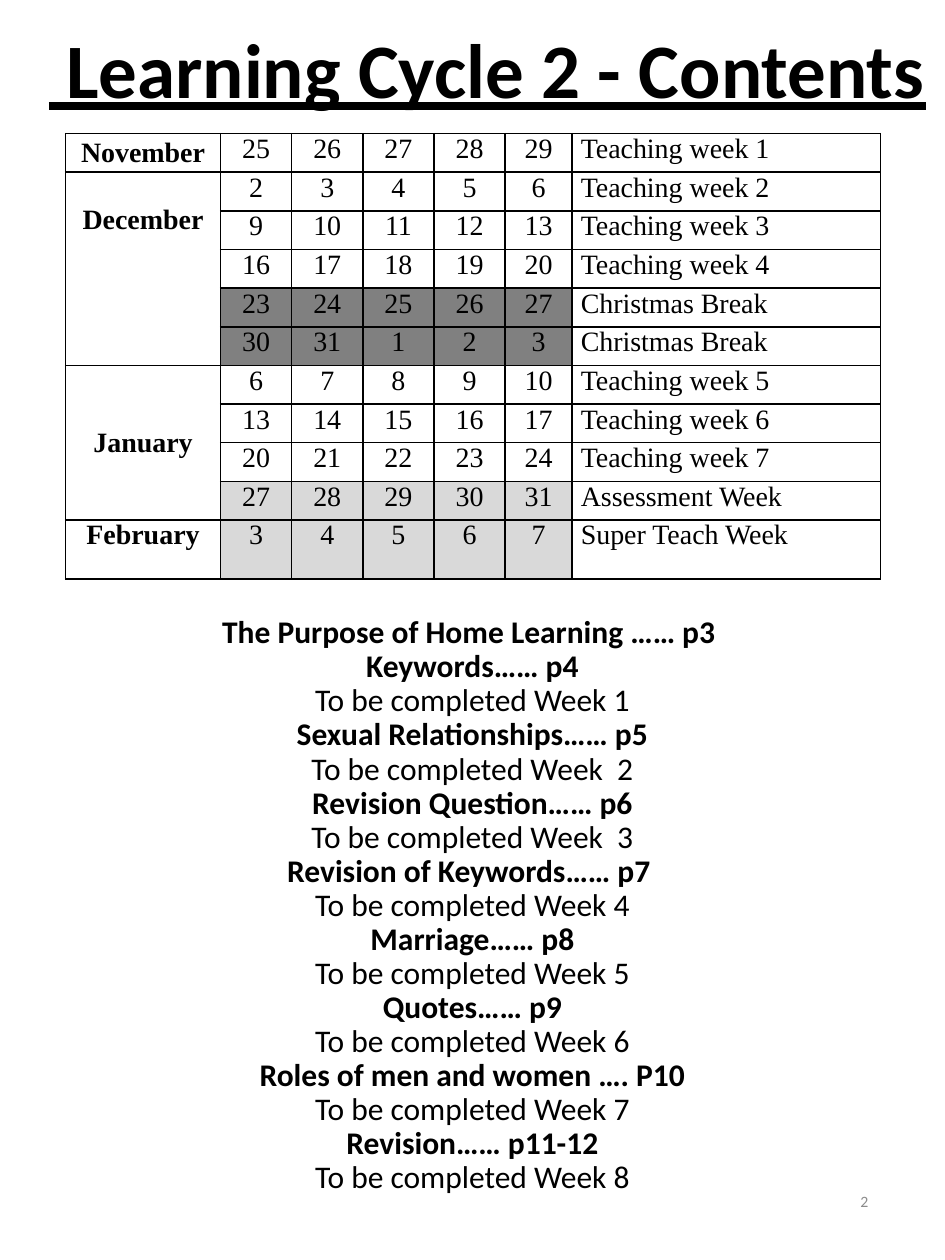
from lxml import etree
from pptx import Presentation, util as u
from pptx.dml.color import RGBColor
from pptx.enum import text
from pptx.oxml.ns import qn

WIDTH, HEIGHT = 7.5, 10
COLUMNS, ROWS = 75, 100
BLACK, WHITE, HOLIDAY, ASSESSMENT, MUTED = "000000", "FFFFFF", "808080", "D9D9D9", "8C8C8C"
CENTER, LEFT, RIGHT = text.PP_ALIGN.CENTER, text.PP_ALIGN.LEFT, text.PP_ALIGN.RIGHT
TOP, MIDDLE = text.MSO_ANCHOR.TOP, text.MSO_ANCHOR.MIDDLE

# First day of each week, its label and the shade of its days
WEEKS = [
    (25, "Teaching week 1", WHITE),
    (2, "Teaching week 2", WHITE),
    (9, "Teaching week 3", WHITE),
    (16, "Teaching week 4", WHITE),
    (23, "Christmas Break", HOLIDAY),
    (30, "Christmas Break", HOLIDAY),
    (6, "Teaching week 5", WHITE),
    (13, "Teaching week 6", WHITE),
    (20, "Teaching week 7", WHITE),
    (27, "Assessment Week", ASSESSMENT),
    (3, "Super Teach Week", ASSESSMENT),
]
# Month, number of weeks, anchor and top margin in inches
MONTHS = [
    ("November", 1, MIDDLE, 0),
    ("December", 5, TOP, 0.26),
    ("January", 4, MIDDLE, 0),
    ("February", 1, TOP, 0),
]
# Topic and the week it is due
TOPICS = [
    ("The Purpose of Home Learning …… p3 ", None),
    ("Keywords…… p4", "Week 1"),
    ("Sexual Relationships…… p5", "Week  2"),
    ("Revision Question…… p6", "Week  3"),
    ("Revision of Keywords…… p7 ", "Week 4"),
    ("Marriage…… p8", "Week 5"),
    ("Quotes…… p9", "Week 6"),
    ("Roles of men and women …. P10", "Week 7"),
    ("Revision…… p11-12", "Week 8"),
]


def color(hex_value):
    return RGBColor.from_string(hex_value)


def add_text(paragraph, words, size=18, font="Calibri", fill=BLACK,
             bold=False, underline=None, align=LEFT):
    paragraph.alignment = align
    run = paragraph.add_run()
    run.text = words
    run.font.size, run.font.name = u.Pt(size), font
    run.font.bold, run.font.underline = bold, underline
    run.font.color.rgb = color(fill)


class Page:
    table_style = {"size": 16, "font": "Times New Roman"}

    def __init__(self, deck):
        self.slide = deck.slides.add_slide(deck.slide_layouts[5])

    def box(self, left, top, width, height):
        """Turn grid columns and rows into slide lengths."""
        across, down = WIDTH / COLUMNS, HEIGHT / ROWS
        return [u.Inches(n) for n in
                (left * across, top * down, width * across, height * down)]

    def topic_list(self, area, topics):
        title = self.slide.shapes.title
        title.left, title.top, title.width, title.height = self.box(*area)
        frame = title.text_frame
        frame.auto_size = text.MSO_AUTO_SIZE.NONE
        frame.word_wrap, frame.vertical_anchor = True, MIDDLE
        frame.margin_bottom = u.Inches(0.32)
        paragraph = frame.paragraphs[0]
        paragraph.line_spacing = 0.9
        for index, (topic, week) in enumerate(topics):
            if index:
                paragraph.add_line_break()
            add_text(paragraph, topic, bold=True, align=CENTER)
            if week:
                paragraph.add_line_break()
                add_text(paragraph, f"To be completed {week}", align=CENTER)

    def label(self, area, words, wrap=True, anchor=TOP, **style):
        frame = self.slide.shapes.add_textbox(*self.box(*area)).text_frame
        frame.word_wrap, frame.vertical_anchor = wrap, anchor
        if not wrap:
            frame.auto_size = text.MSO_AUTO_SIZE.SHAPE_TO_FIT_TEXT
        add_text(frame.paragraphs[0], words, **style)

    def cell(self, cell, words, fill=WHITE, anchor=TOP, top=0, **style):
        cell.margin_left = cell.margin_right = u.Inches(0.07)
        cell.margin_top, cell.margin_bottom = u.Inches(top), 0
        cell.vertical_anchor = anchor
        cell.fill.solid()
        cell.fill.fore_color.rgb = color(fill)
        add_text(cell.text_frame.paragraphs[0], words, **self.table_style, **style)

    def border(self, cell):
        properties = cell._tc.get_or_add_tcPr()
        for side in ("a:lnL", "a:lnR", "a:lnT", "a:lnB"):
            line = etree.SubElement(properties, qn(side), w=str(u.Pt(1)))
            solid = etree.SubElement(line, qn("a:solidFill"))
            etree.SubElement(solid, qn("a:srgbClr"), val=BLACK)

    def calendar(self, area, weeks, months):
        left, top, width, height = self.box(*area)
        table = self.slide.shapes.add_table(
            len(weeks), 7, left, top, width, height).table
        table.first_row = table.horz_banding = False

        # Equal day columns and week rows fill what the others leave
        month, friday, label, last = (u.Inches(n) for n in (1.23, 0.53, 2.45, 0.47))
        day = (width - month - friday - label) // 4
        for column, size in zip(table.columns, [month] + [day] * 4 + [friday, label]):
            column.width = size
        for row in table.rows:
            row.height = (height - last) // (len(weeks) - 1)
        table.rows[len(weeks) - 1].height = last

        for each in table.iter_cells():
            self.border(each)

        # Days run on past the 31st into the next month
        for row, (first, name, shade) in enumerate(weeks):
            for offset in range(5):
                date = (first + offset - 1) % 31 + 1
                self.cell(table.cell(row, offset + 1), str(date), shade, align=CENTER)
            self.cell(table.cell(row, 6), name)

        row = 0
        for name, span, anchor, margin in months:
            start = table.cell(row, 0)
            if span > 1:
                start.merge(table.cell(row + span - 1, 0))
            self.cell(start, name, anchor=anchor, top=margin, bold=True, align=CENTER)
            row += span


def main():
    deck = Presentation()
    deck.slide_width, deck.slide_height = u.Inches(WIDTH), u.Inches(HEIGHT)
    page = Page(deck)

    # Home learning topics
    page.topic_list((0, 56.3, 75, 33.9), TOPICS)
    # Heading
    page.label((2.9, 1.2, 72.2, 8.4), " Learning Cycle 2 - Contents",
               wrap=False, size=44, bold=True, underline=True)
    # Page number
    page.label((53, 92.7, 16.9, 5.3), "2", anchor=MIDDLE,
               size=9, fill=MUTED, align=RIGHT)
    # Term calendar
    page.calendar((5.2, 10.6, 64.7, 35.4), WEEKS, MONTHS)

    deck.save("out.pptx")


if __name__ == "__main__":
    main()
